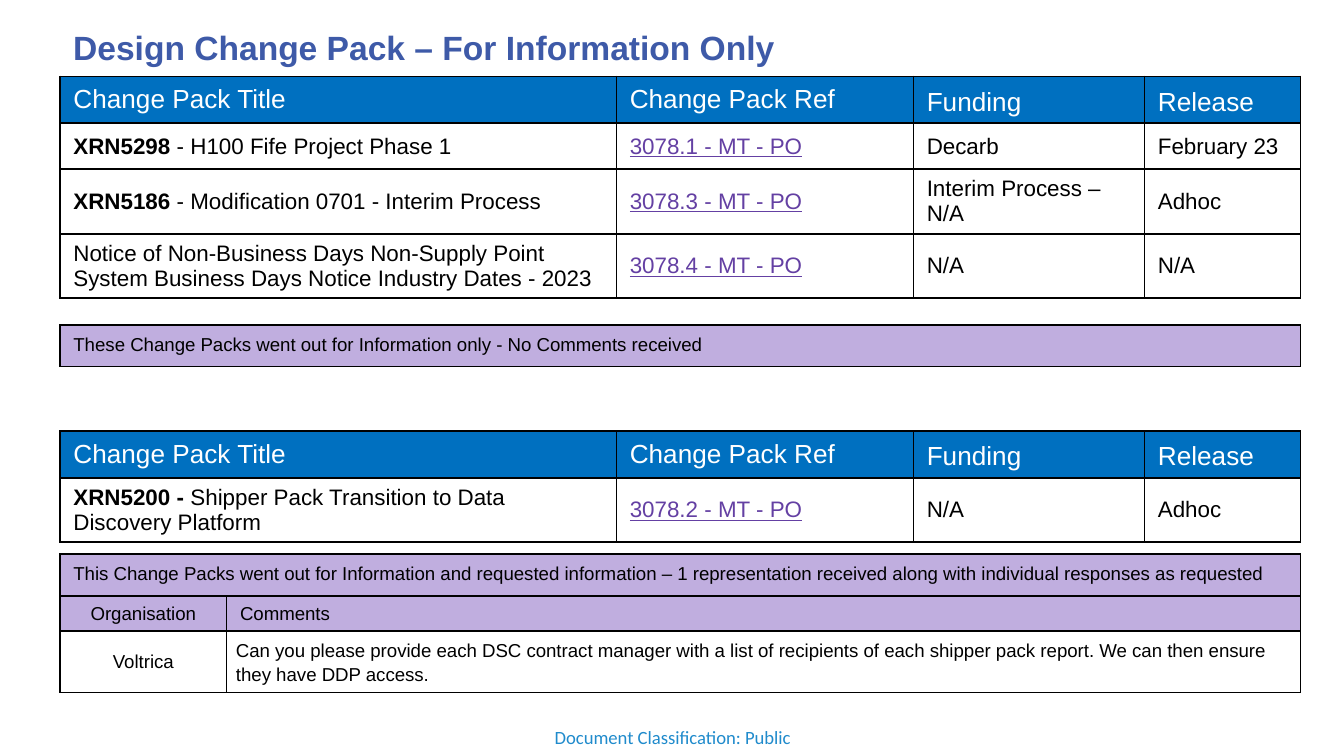
from pptx import Presentation
from pptx.dml.color import RGBColor
from pptx.enum.text import MSO_ANCHOR as Anchor, PP_ALIGN as Align
from pptx.oxml import parse_xml
from pptx.oxml.ns import nsdecls
from pptx.util import Inches, Pt

BLACK = RGBColor(0x00, 0x00, 0x00)
WHITE = RGBColor(0xFF, 0xFF, 0xFF)
TITLE_BLUE = RGBColor(0x3E, 0x5A, 0xA8)
HEADER_BLUE = RGBColor(0x00, 0x70, 0xC0)
FOOTER_BLUE = RGBColor(0x20, 0x8B, 0xCC)
LINK_PURPLE = RGBColor(0x64, 0x40, 0xA3)
LILAC = RGBColor(0xC0, 0xAE, 0xDF)

deck = Presentation()
deck.slide_width = Inches(10)
deck.slide_height = deck.slide_width * 9 // 16
page = deck.slides.add_slide(deck.slide_layouts[6])
across, down = deck.slide_width / 100, deck.slide_height / 100
LEFT, WIDTH = 4.46, 92.3


def add_grid(top, columns, rows):
    frame = page.shapes.add_table(
        len(rows), len(columns), int(LEFT * across), int(top * down),
        int(sum(columns) * across), int(sum(rows) * down))
    table = frame.table
    table.first_row = table.horz_banding = False
    for column, share in zip(table.columns, columns):
        column.width = int(share * across)
    for row, share in zip(table.rows, rows):
        row.height = int(share * down)
    for cell in table.iter_cells():
        properties = cell._tc.get_or_add_tcPr()
        for side in "LRTB":
            properties.append(parse_xml(
                f'<a:ln{side} {nsdecls("a")} w="12700"><a:solidFill>'
                f'<a:srgbClr val="{BLACK}"/></a:solidFill></a:ln{side}>'))
        cell.fill.background()
    return table


def write(frame, text, size, color=BLACK, lead="", name="Arial", spacing=None, align=Align.LEFT):
    para = frame.paragraphs[0]
    para.alignment = align
    para.line_spacing = spacing
    para.font.name, para.font.size, para.font.color.rgb = name, Pt(size), color
    if lead:
        span = para.add_run()
        span.text, span.font.bold = lead, True
    para.add_run().text = text
    return para


footer = page.shapes.add_textbox(
    int(39.5 * across), int(95 * down), int(21.1 * across), int(5.1 * down)).text_frame
footer.margin_left = footer.margin_right = footer.margin_top = footer.margin_bottom = 0
footer.word_wrap, footer.vertical_anchor = True, Anchor.MIDDLE
write(footer, "Document Classification: Public", 10, FOOTER_BLUE, name="Calibri", align=Align.CENTER)

title = page.shapes.add_textbox(
    int(LEFT * across), int(2.2 * down), int(94.7 * across), int(7.3 * down)).text_frame
title.word_wrap, title.vertical_anchor = True, Anchor.MIDDLE
para = write(title, "Design Change Pack – For Information Only", 18, TITLE_BLUE, spacing=1.15)
para.font.bold, para.space_after = True, Pt(10)

headings = ["Change Pack Title", "Change Pack Ref", "Funding", "Release"]
change_packs = [
    (10.1, [6.2, 6.1, 8.4, 8.4], [
        ("XRN5298", " - H100 Fife Project Phase 1", "3078.1 - MT - PO", "Decarb", "February 23"),
        ("XRN5186", " - Modification 0701 - Interim Process", "3078.3 - MT - PO",
         "Interim Process – N/A", "Adhoc"),
        ("", "Notice of Non-Business Days Non-Supply Point System Business Days Notice "
         "Industry Dates - 2023", "3078.4 - MT - PO", "N/A", "N/A"),
    ]),
    (57, [6.2, 8.4], [
        ("XRN5200 - ", "Shipper Pack Transition to Data Discovery Platform",
         "3078.2 - MT - PO", "N/A", "Adhoc"),
    ]),
]
for top, heights, packs in change_packs:
    table = add_grid(top, [41.4, 22.1, 17.2, 11.6], heights)
    for cell in table.iter_cells():
        cell.vertical_anchor = Anchor.MIDDLE
        cell.margin_top = cell.margin_bottom = Inches(0.04)
    for column, heading in enumerate(headings):
        cell = table.cell(0, column)
        cell.fill.solid()
        cell.fill.fore_color.rgb = HEADER_BLUE
        write(cell.text_frame, heading, 14, WHITE, spacing=1.15 if column > 1 else None)
    for row, (lead, *texts) in enumerate(packs, 1):
        for column, text in enumerate(texts):
            is_ref = column == 1
            para = write(table.cell(row, column).text_frame, text, 12,
                         LINK_PURPLE if is_ref else BLACK, lead if column == 0 else "")
            if is_ref:
                para.runs[0].font.underline = True

notes = [
    (43, "These Change Packs went out for Information only - No Comments received"),
    (73.3, "This Change Packs went out for Information and requested information – "
     "1 representation received along with individual responses as requested"),
]
for top, text in notes:
    cell = add_grid(top, [WIDTH], [5.5]).cell(0, 0)
    cell.fill.solid()
    cell.fill.fore_color.rgb = LILAC
    write(cell.text_frame, text, 10, spacing=1.15)

responses = add_grid(78.9, [12.4, 79.9], [4.6, 8.1])
comment = ("Can you please provide each DSC contract manager with a list of recipients of each "
           "shipper pack report. We can then ensure they have DDP access.")
columns = [("Organisation", "Voltrica", Align.CENTER, None, 0.01),
           ("Comments", comment, Align.LEFT, 1.15, 0.07)]
for column, (heading, text, align, spacing, margin) in enumerate(columns):
    header, body = responses.cell(0, column), responses.cell(1, column)
    header.fill.solid()
    header.fill.fore_color.rgb = LILAC
    header.margin_bottom = Inches(0.04)
    write(header.text_frame, heading, 10, align=align)
    body.vertical_anchor = Anchor.MIDDLE
    body.margin_left = body.margin_right = Inches(margin)
    body.margin_top = body.margin_bottom = 0
    write(body.text_frame, text, 10, spacing=spacing, align=align)

deck.save("out.pptx")
